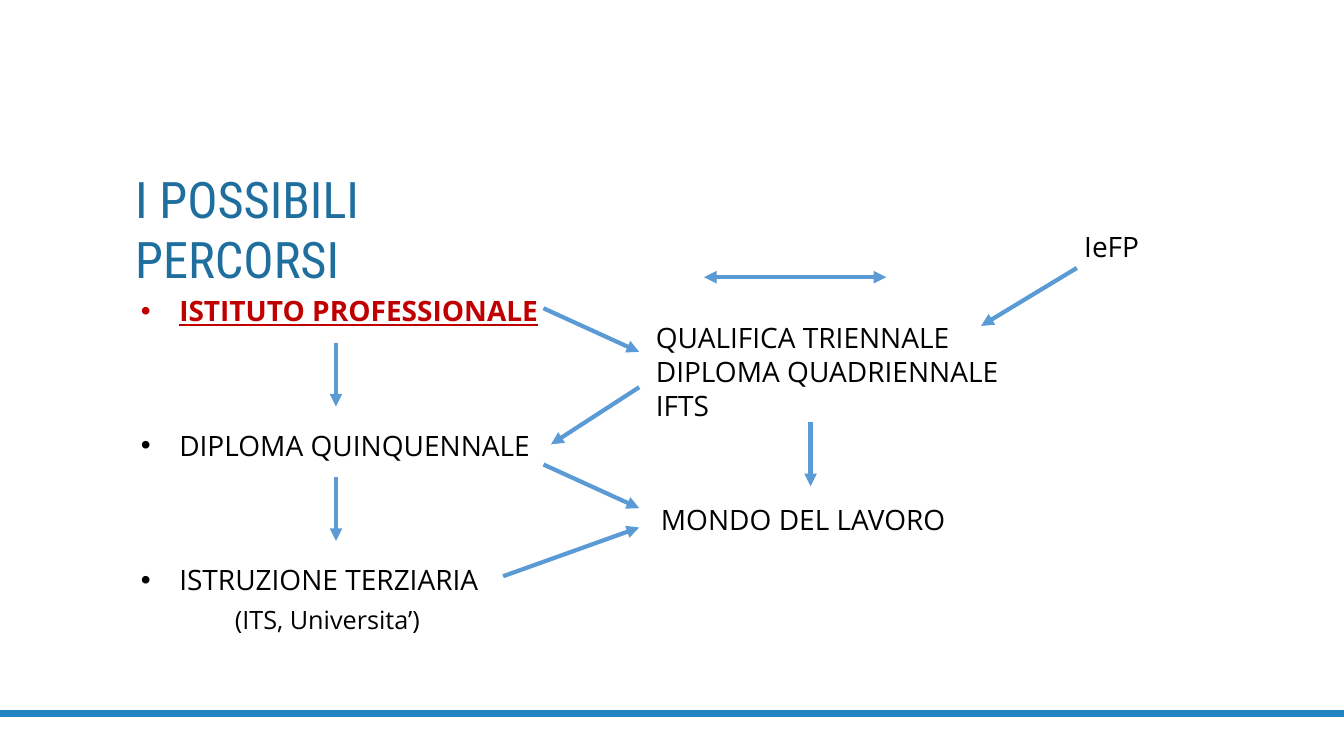
from dataclasses import dataclass
from lxml import etree
from pptx import Presentation
from pptx import util as u
from pptx.dml.color import RGBColor
from pptx.enum import shapes, text
from pptx.oxml.ns import qn

WIDE, HIGH = u.Inches(13.33), u.Inches(7.5)
COLS, ROWS = 160, 90


@dataclass(frozen=True)
class Theme:
    head: str = "Roboto Condensed"
    body: str = "Open Sans"
    title: str = "1E6E9E"
    ink: str = "000000"
    key: str = "C00000"
    link: str = "5B9BD5"
    rule: str = "2084C0"
    big: int = 36
    mid: int = 20
    small: int = 18
    lead: float = 1.2
    gap: int = 72
    thin: int = 3
    thick: int = 5


@dataclass(frozen=True)
class Box:
    x: float
    y: float
    w: float
    h: float

    def spot(self, x, y):
        return int((self.x + x) * WIDE / COLS), int((self.y + y) * HIGH / ROWS)

    def inner(self, x, y, w, h):
        return Box(self.x + x, self.y + y, w, h)

    def place(self):
        return *self.spot(0, 0), int(self.w * WIDE / COLS), int(self.h * HIGH / ROWS)


THEME = Theme()


def style(font, name, size, color):
    font.name, font.size = name, u.Pt(size)
    font.color.rgb = RGBColor.from_string(color)


def label(slide, box, words, size=THEME.mid):
    frame = slide.shapes.add_textbox(*box.place()).text_frame
    frame.word_wrap = True
    frame.text = words
    for para in frame.paragraphs:
        para.line_spacing = u.Pt(size * THEME.lead)
        style(para.runs[0].font, THEME.body, size, THEME.ink)
    return frame


def line(slide, box, start, end, color=THEME.link, width=THEME.thin, tips=()):
    link = slide.shapes.add_connector(
        shapes.MSO_CONNECTOR.STRAIGHT, *box.spot(*start), *box.spot(*end))
    link.line.width = u.Pt(width)
    link.line.color.rgb = RGBColor.from_string(color)
    props = link._element.spPr
    for tip in tips:
        etree.SubElement(props.find(qn("a:ln")), qn(f"a:{tip}"), type="triangle")
    etree.SubElement(props, qn("a:effectLst"))


def arrow(slide, box, start, end, tips=("tailEnd",)):
    line(slide, box, start, end, tips=tips)


def header(slide, box):
    title = slide.shapes.title
    title.left, title.top, title.width, title.height = box.place()
    frame = title.text_frame
    frame.text = "I POSSIBILI PERCORSI"
    frame.word_wrap = True
    frame.auto_size = text.MSO_AUTO_SIZE.NONE
    frame.vertical_anchor = text.MSO_ANCHOR.TOP
    para = frame.paragraphs[0]
    para.alignment = text.PP_ALIGN.LEFT
    style(para.runs[0].font, THEME.head, THEME.big, THEME.title)


def school(slide, box):
    steps = ["ISTITUTO PROFESSIONALE", "DIPLOMA QUINQUENNALE", "ISTRUZIONE TERZIARIA"]
    frame = label(slide, box, "\n".join(steps))
    for row, para in enumerate(frame.paragraphs):
        props = para._p.get_or_add_pPr()
        indent = u.Inches(0.38)
        props.set("marL", str(indent))
        props.set("indent", str(-indent))
        if row:
            para.space_before = u.Pt(THEME.gap)
        etree.SubElement(props, qn("a:buFont"), typeface="Arial")
        etree.SubElement(props, qn("a:buChar"), char="•")
    font = frame.paragraphs[0].runs[0].font
    font.bold = font.underline = True
    font.color.rgb = RGBColor.from_string(THEME.key)
    pitch = 16
    for row in range(len(steps) - 1):
        top = 6.4 + row * pitch
        arrow(slide, box, (24.4, top), (24.4, top + 7.6))
    label(slide, box.inner(11.2, 37, 25, 4.8), "(ITS, Universita’)", THEME.small)


def work(slide, box):
    label(slide, box.inner(51, 0, 10, 5.3), "IeFP")
    label(slide, box.inner(0, 10.9, 51, 13.3),
          "QUALIFICA TRIENNALE\nDIPLOMA QUADRIENNALE\nIFTS")
    label(slide, box.inner(0.6, 32.5, 38, 5.3), "MONDO DEL LAVORO")
    arrow(slide, box, (51.3, 5.2), (39.9, 12.1))
    arrow(slide, box, (19.6, 23.6), (19.6, 31.2))
    arrow(slide, box, (6.9, 6.3), (28.6, 6.3), ("headEnd", "tailEnd"))


def bridge(slide, box):
    for top in (0, 18.6):
        arrow(slide, box, (4.8, top), (box.w, top + 5.2))
    arrow(slide, box, (box.w, 9.4), (5.7, 16.2))
    arrow(slide, box, (0, box.h), (box.w, 26.1))


def footer(slide, box):
    line(slide, box, (0, 0), (box.w, 0), THEME.rule, THEME.thick)


def main():
    deck = Presentation()
    deck.slide_width, deck.slide_height = WIDE, HIGH
    slide = deck.slides.add_slide(deck.slide_layouts.get_by_name("Title Only"))
    footer(slide, Box(0, 85, COLS, 5))
    header(slide, Box(14.9, 19.4, 53.4, 8.5))
    school(slide, Box(15.6, 34.4, 50, 37.6))
    work(slide, Box(76.9, 26.7, 61, 38))
    bridge(slide, Box(59.9, 36.7, 16.2, 31.9))
    deck.save("out.pptx")


if __name__ == "__main__":
    main()
